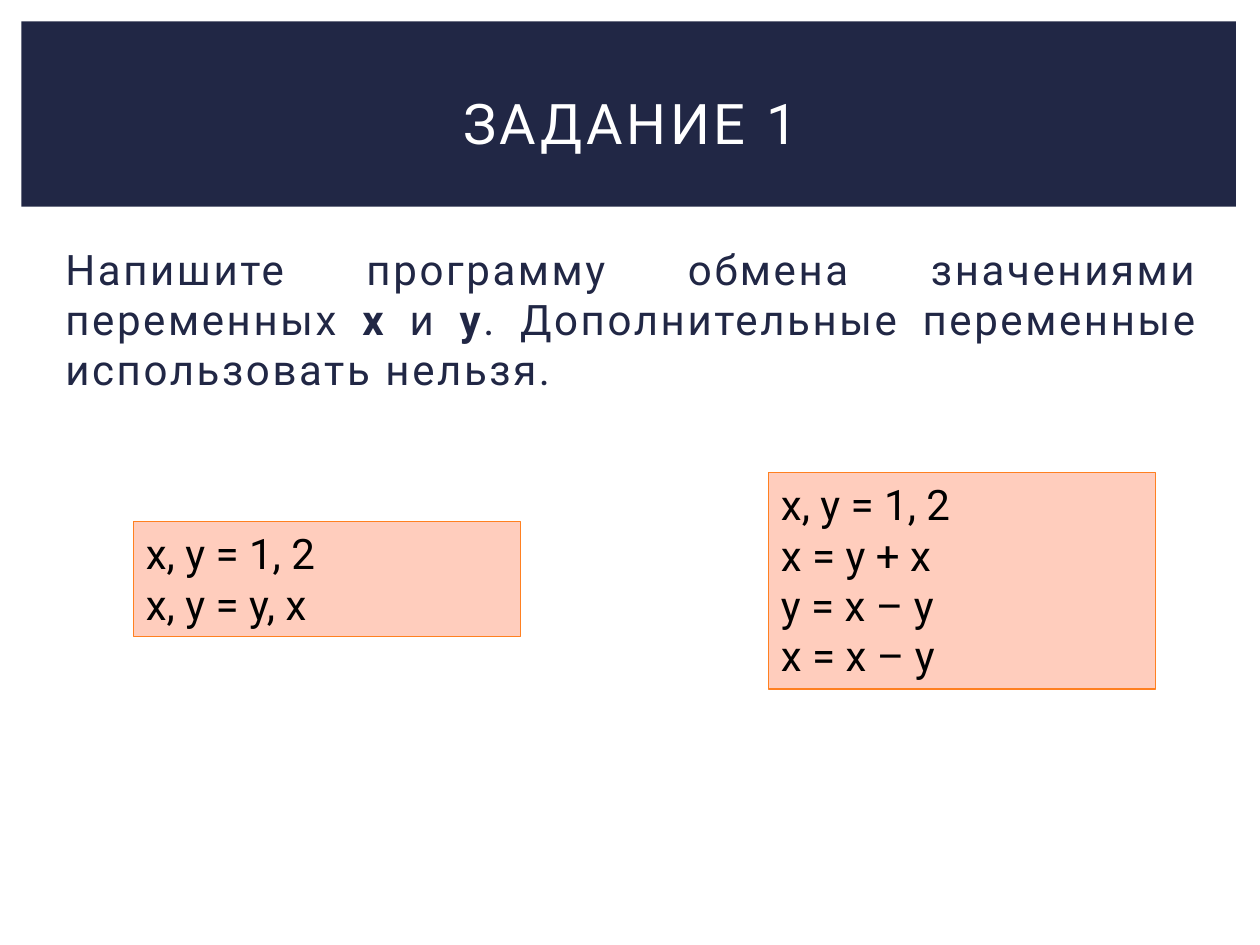
from dataclasses import dataclass

from pptx import Presentation
from pptx.dml.color import RGBColor as Rgb
from pptx.enum.shapes import MSO_SHAPE as Shape
from pptx.enum.text import MSO_ANCHOR as Anchor, MSO_AUTO_SIZE as Fit, PP_ALIGN as Align
from pptx.util import Inches, Pt


@dataclass(frozen=True)
class Theme:
    font: str = "Roboto"
    navy: Rgb = Rgb(0x21, 0x27, 0x45)
    white: Rgb = Rgb(0xFF, 0xFF, 0xFF)
    black: Rgb = Rgb(0, 0, 0)
    peach: Rgb = Rgb(0xFF, 0xCD, 0xBD)
    orange: Rgb = Rgb(0xFF, 0x80, 0x21)
    head: Pt = Pt(32)
    body: Pt = Pt(24)


THEME = Theme()

TASK = (
    ("Напишите программу обмена значениями переменных ", False),
    ("x ", True),
    ("и ", False),
    ("y", True),
    (". Дополнительные переменные использовать нельзя.", False),
)

# Left, top, width, height and the lines of each program
CODES = (
    ((1.06, 4.14, 3.07, 0.91), ("x, y = 1, 2", "x, y = y, x")),
    ((6.1, 3.75, 3.07, 1.72), ("x, y = 1, 2", "x = y + x", "y = x – y", "x = x – y")),
)


def apply(item, form):
    for name, value in form.items():
        setattr(item, name, value)


def place(shape, box):
    names = ("left", "top", "width", "height")
    apply(shape, dict(zip(names, map(Inches, box))))


def add_run(para, text, size, color, bold=False, space=0):
    run = para.add_run()
    run.text = text
    apply(run.font, {"name": THEME.font, "size": size, "bold": bold})
    run.font.color.rgb = color
    if space:
        run.font._element.set("spc", str(int(space * 100)))


def add_rect(slide, box, fill, line=None):
    rect = slide.shapes.add_shape(Shape.RECTANGLE, *map(Inches, box))
    rect.shadow.inherit = False
    rect.fill.solid()
    rect.fill.fore_color.rgb = fill
    if line is None:
        rect.line.fill.background()
    else:
        rect.line.color.rgb = line
        rect.line.width = Pt(0.79)
    return rect


def add_band(slide):
    band = add_rect(slide, (0.17, 0.17, 9.64, 1.47), THEME.navy)
    # Send the band behind the title
    slide.shapes._spTree.insert(2, band._element)


def set_title(slide, text):
    title = slide.shapes.title
    place(title, (0.42, 0.39, 9.17, 1.15))
    frame = title.text_frame
    form = {"vertical_anchor": Anchor.MIDDLE, "word_wrap": True, "auto_size": Fit.NONE}
    apply(frame, form)
    para = frame.paragraphs[0]
    para.alignment = Align.CENTER
    add_run(para, text, THEME.head, THEME.white, space=2)


def add_task(slide, parts):
    box = slide.shapes.add_textbox(*map(Inches, (0.42, 1.88, 9.19, 4.82)))
    box.text_frame.word_wrap = True
    para = box.text_frame.paragraphs[0]
    para.alignment = Align.JUSTIFY
    for text, bold in parts:
        add_run(para, text, THEME.body, THEME.navy, bold, space=1.5)


def add_code(slide, box, lines):
    frame = add_rect(slide, box, THEME.peach, THEME.orange).text_frame
    form = {"vertical_anchor": Anchor.TOP, "word_wrap": True,
            "auto_size": Fit.SHAPE_TO_FIT_TEXT}
    apply(frame, form)
    for i, line in enumerate(lines):
        para = frame.add_paragraph() if i else frame.paragraphs[0]
        para.alignment = Align.LEFT
        add_run(para, line, THEME.body, THEME.black)


def main():
    deck = Presentation()
    apply(deck, {"slide_width": Inches(10), "slide_height": Inches(7.5)})
    slide = deck.slides.add_slide(deck.slide_layouts[5])

    # Heading
    add_band(slide)
    set_title(slide, "ЗАДАНИЕ 1")

    # Task and its two solutions
    add_task(slide, TASK)
    for box, lines in CODES:
        add_code(slide, box, lines)

    deck.save("out.pptx")


if __name__ == "__main__":
    main()
